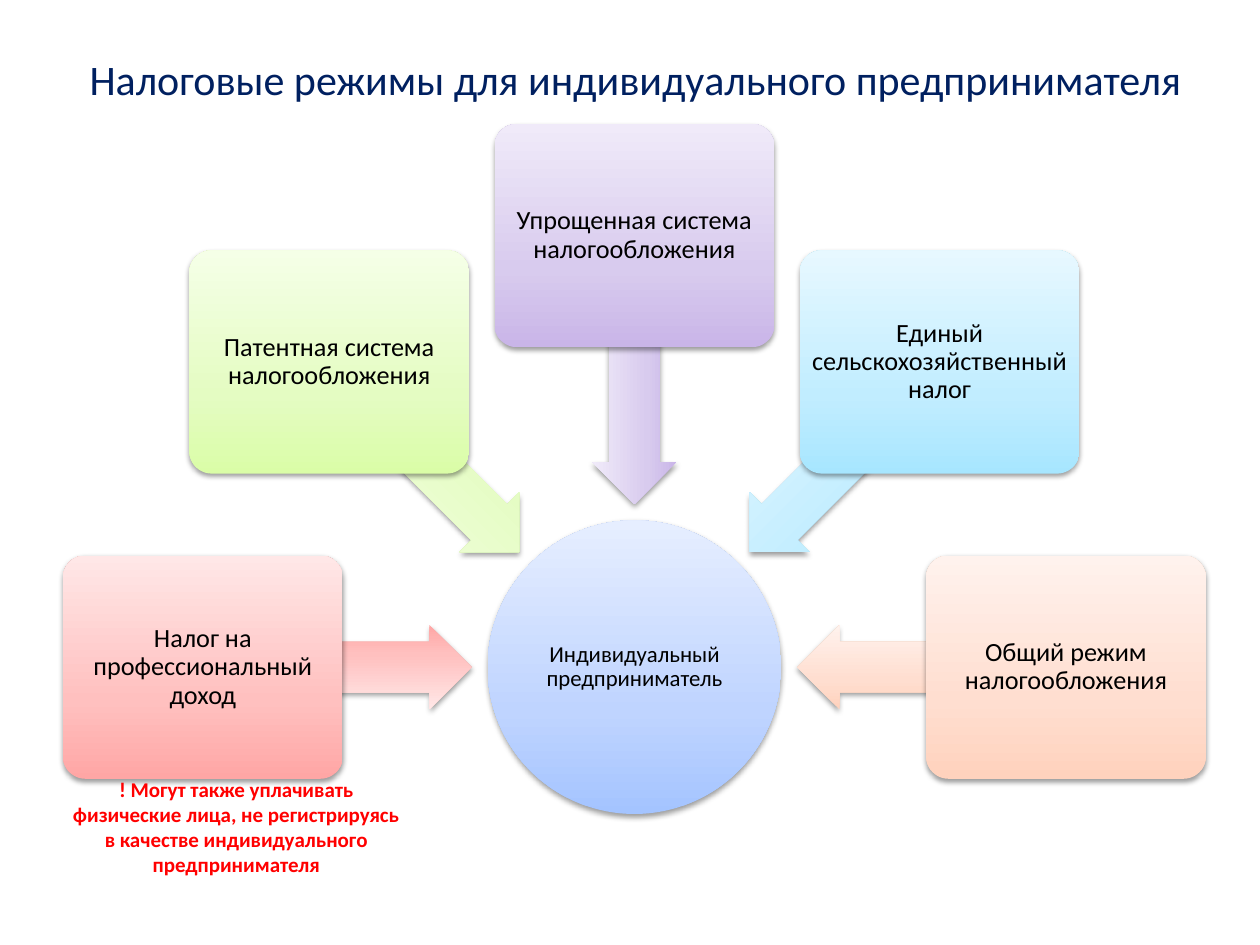
import copy
import math

from pptx import Presentation
from pptx import util as u
from pptx.dml.color import RGBColor
from pptx.enum import shapes, text
from pptx.oxml import parse_xml
from pptx.oxml.ns import nsdecls, qn

FONT = "Calibri"
COLORS = {"title": "002060", "body": "000000", "note": "FF0000"}
# Gradient colours from bottom to top
GRADIENTS = {
    "blue": ("A4C4FF", "BFD4FF", "E6EEFF"),
    "red": ("FFA6A5", "FFC0BF", "FFE7E7"),
    "green": ("DAFDA7", "E4FCC2", "F5FFE7"),
    "purple": ("C9B5E8", "D8CBEE", "F0EAF9"),
    "aqua": ("A7E6FF", "C1EDFF", "E7F8FF"),
    "orange": ("FFD2BD", "FFDED0", "FFF2ED"),
}
STOPS = (0, 0.35, 1)

# Tax regimes, clockwise around the hub from the left
REGIMES = [
    ("Налог на профессиональный доход", "red"),
    ("Патентная система налогообложения", "green"),
    ("Упрощенная система налогообложения", "purple"),
    ("Единый сельскохозяйственный налог", "aqua"),
    ("Общий режим налогообложения", "orange"),
]

# Radial layout, in centimetres
HUB_X, HUB_Y, HUB_SIZE = 12.79, 13.45, 5.92
BOX_WIDTH, BOX_HEIGHT, BOX_RADIUS = 5.64, 4.5, 8.7
ARROW_LENGTH, ARROW_WIDTH, ARROW_RADIUS = 5.41, 1.7, 5.99
START_ANGLE, ANGLE_STEP = 180, 45


def add_gradient(shape, name):
    shape.fill.gradient()
    shape.fill.gradient_angle = 90
    stop_list = shape._element.spPr.find(".//" + qn("a:gsLst"))
    stop_list.append(copy.deepcopy(stop_list[0]))
    for stop, position, color in zip(shape.fill.gradient_stops, STOPS, GRADIENTS[name]):
        stop.position = position
        stop.color.rgb = RGBColor.from_string(color)


def add_shadow(shape):
    shape._element.spPr.append(parse_xml(
        f'<a:effectLst {nsdecls("a")}>'
        '<a:outerShdw blurRad="40000" dist="20000" dir="5400000" rotWithShape="0">'
        '<a:srgbClr val="000000"><a:alpha val="38000"/></a:srgbClr>'
        '</a:outerShdw></a:effectLst>'))


def add_radial_shape(slide, kind, width, height, gradient, radius=0, angle=0):
    """Add a shape centred at the given polar position around the hub."""
    center_x = HUB_X + radius * math.cos(math.radians(angle))
    center_y = HUB_Y + radius * math.sin(math.radians(angle))
    shape = slide.shapes.add_shape(
        kind, u.Cm(center_x - width / 2), u.Cm(center_y - height / 2),
        u.Cm(width), u.Cm(height))
    add_gradient(shape, gradient)
    shape.line.fill.background()
    add_shadow(shape)
    return shape


def write_text(shape, wording, size, color, bold=False, spacing=None):
    frame = shape.text_frame
    frame.text = wording
    frame.word_wrap = True
    frame.vertical_anchor = text.MSO_ANCHOR.MIDDLE
    paragraph = frame.paragraphs[0]
    paragraph.alignment = text.PP_ALIGN.CENTER
    paragraph.line_spacing = spacing
    paragraph.font.name = FONT
    paragraph.font.size = u.Pt(size)
    paragraph.font.bold = bold
    paragraph.font.color.rgb = RGBColor.from_string(COLORS[color])


def add_label(shape, wording, size, inset):
    write_text(shape, wording, size, "body", spacing=0.9)
    frame = shape.text_frame
    frame.margin_left = frame.margin_right = u.Cm(inset)
    frame.margin_top = frame.margin_bottom = u.Cm(inset)


def add_regime(slide, wording, gradient, angle):
    arrow = add_radial_shape(slide, shapes.MSO_SHAPE.LEFT_ARROW, ARROW_LENGTH,
                             ARROW_WIDTH, gradient, ARROW_RADIUS, angle)
    arrow.adjustments[0] = 0.6
    arrow.adjustments[1] = 0.5
    arrow.rotation = angle % 360
    box = add_radial_shape(slide, shapes.MSO_SHAPE.ROUNDED_RECTANGLE, BOX_WIDTH,
                           BOX_HEIGHT, gradient, BOX_RADIUS, angle)
    box.adjustments[0] = 0.1
    add_label(box, wording, 15, 0.08)


def main():
    presentation = Presentation()
    presentation.slide_width = u.Cm(25.4)
    presentation.slide_height = u.Cm(19.05)
    slide = presentation.slides.add_slide(presentation.slide_layouts[5])

    # Title
    title = slide.shapes.title
    title.left, title.top = u.Cm(0.71), u.Cm(0.95)
    title.width, title.height = u.Cm(24.2), u.Cm(1.28)
    write_text(title, "Налоговые режимы для индивидуального предпринимателя", 24, "title")
    title.text_frame.auto_size = text.MSO_AUTO_SIZE.NONE

    # Hub and the regimes around it
    hub = add_radial_shape(slide, shapes.MSO_SHAPE.OVAL, HUB_SIZE, HUB_SIZE, "blue")
    add_label(hub, "Индивидуальный предприниматель", 13, 0.04)
    for index, (wording, gradient) in enumerate(REGIMES):
        add_regime(slide, wording, gradient, START_ANGLE + index * ANGLE_STEP)

    # Note under the professional income tax
    note = slide.shapes.add_textbox(u.Cm(1.07), u.Cm(15.52), u.Cm(7.39), u.Cm(2.31))
    write_text(note, "! Могут также уплачивать физические лица, не регистрируясь в "
               "качестве индивидуального предпринимателя", 12, "note", bold=True)
    note.text_frame.vertical_anchor = text.MSO_ANCHOR.TOP

    presentation.save("out.pptx")


if __name__ == "__main__":
    main()
